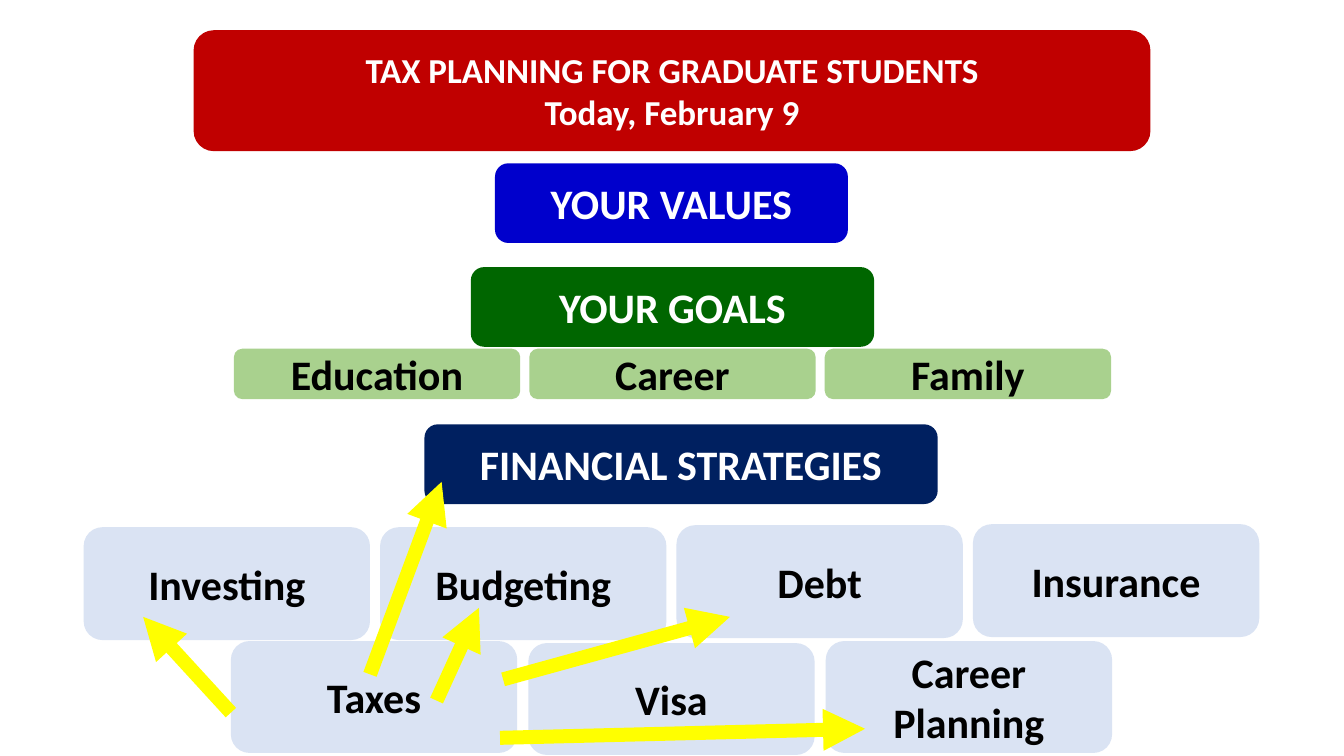
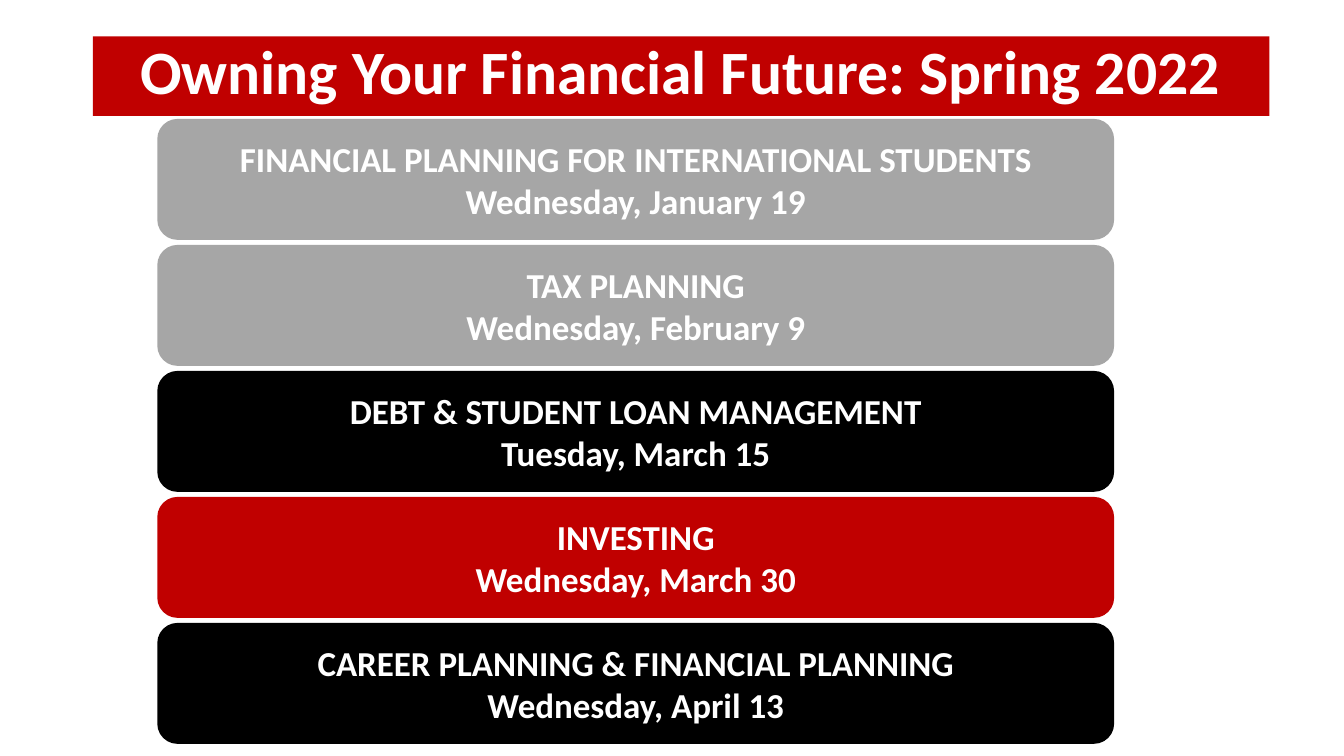
import pptx
import pptx.util
import pptx.dml.color
import pptx.enum.shapes
import pptx.enum.text
import pptx.oxml
import pptx.oxml.ns
from pptx.util import Inches

HUES = {
    "red": "C00000", "blue": "0000CC", "green": "006600", "lime": "A9D18E",
    "navy": "002060", "pale": "DAE3F3", "gray": "A6A6A6", "black": "000000",
    "white": "FFFFFF", "yellow": "FFFF00",
}


def color(name):
    return pptx.dml.color.RGBColor.from_string(HUES[name])


class Deck:
    face = "Calibri"

    def __init__(self):
        self.show = pptx.Presentation()
        self.show.slide_width = Inches(13.33)
        self.show.slide_height = Inches(7.5)
        self.slide = None

    def start(self, layout):
        found = self.show.slide_layouts.get_by_name(layout)
        self.slide = self.show.slides.add_slide(found)

    def paint(self, shape, fill):
        shape.fill.solid()
        shape.fill.fore_color.rgb = color(fill)
        shape.line.fill.background()

    def label(self, shape, lines, size, ink):
        frame = shape.text_frame
        frame.word_wrap = True
        frame.auto_size = pptx.enum.text.MSO_AUTO_SIZE.NONE
        frame.vertical_anchor = pptx.enum.text.MSO_ANCHOR.MIDDLE
        frame.text = "\n".join(lines)
        for para in frame.paragraphs:
            para.alignment = pptx.enum.text.PP_ALIGN.CENTER
            font = para.font
            font.name = self.face
            font.size = pptx.util.Pt(size)
            font.bold = True
            font.color.rgb = color(ink)

    def title(self, text, left, top, width, height):
        shape = self.slide.shapes.title
        shape.left, shape.top = Inches(left), Inches(top)
        shape.width, shape.height = Inches(width), Inches(height)
        self.paint(shape, "red")
        self.label(shape, [text], 44, "white")
        shape.text_frame.vertical_anchor = pptx.enum.text.MSO_ANCHOR.TOP
        shape.text_frame.paragraphs[0].line_spacing = 0.9

    def box(self, lines, left, top, width, height, fill, ink="white", size=30):
        shape = self.slide.shapes.add_shape(
            pptx.enum.shapes.MSO_SHAPE.ROUNDED_RECTANGLE,
            Inches(left), Inches(top), Inches(width), Inches(height))
        shape.shadow.inherit = False
        self.paint(shape, fill)
        self.label(shape, lines, size, ink)

    def banner(self, lines, left, top, fill):
        self.box(lines, left, top, 9.49, 1.2, fill, size=25)

    def row(self, names, left, step, tops, height, fill):
        for index, (name, top) in enumerate(zip(names, tops)):
            self.box([name], left + index * step, top, 2.84, height, fill, "black")

    def arrow(self, start, end):
        line = self.slide.shapes.add_connector(
            pptx.enum.shapes.MSO_CONNECTOR.STRAIGHT,
            *[Inches(value) for value in start + end])
        line.line.color.rgb = color("yellow")
        line.line.width = pptx.util.Pt(10)
        space = pptx.oxml.ns.nsdecls("a")
        props = line._element.spPr
        stroke = props.find(pptx.oxml.ns.qn("a:ln"))
        stroke.append(pptx.oxml.parse_xml(f'<a:tailEnd {space} type="triangle"/>'))
        props.append(pptx.oxml.parse_xml(f"<a:effectLst {space}/>"))


def plan(deck):
    deck.start("Blank")
    deck.banner(["TAX PLANNING FOR GRADUATE STUDENTS", "Today, February 9"],
                1.92, 0.3, "red")
    deck.box(["YOUR VALUES"], 4.91, 1.62, 3.5, 0.79, "blue")
    deck.box(["YOUR GOALS"], 4.67, 2.65, 4, 0.79, "green")
    deck.row(["Education", "Career", "Family"], 2.32, 2.93, [3.46] * 3, 0.5, "lime")
    deck.box(["FINANCIAL STRATEGIES"], 4.21, 4.21, 5.09, 0.79, "navy")
    deck.row(["Investing", "Budgeting", "Debt", "Insurance"],
             0.83, 2.94, [5.23, 5.23, 5.21, 5.2], 1.12, "pale")
    deck.row(["Taxes", "Visa", "Career Planning"],
             2.29, 2.95, [6.36, 6.38, 6.36], 1.11, "pale")
    for start, end in [
        ((4.99, 6.74), (7.24, 6.12)),
        ((4.96, 7.32), (8.58, 7.23)),
        ((3.67, 6.69), (4.38, 4.78)),
        ((4.33, 6.95), (4.75, 6.03)),
        ((2.29, 7.07), (1.42, 6.12)),
    ]:
        deck.arrow(start, end)


def series(deck):
    deck.start("Title Only")
    deck.title("Owning Your Financial Future: Spring 2022", 0.92, 0.36, 11.67, 0.79)
    talks = [
        ("FINANCIAL PLANNING FOR INTERNATIONAL STUDENTS", "Wednesday, January 19", "gray"),
        ("TAX PLANNING", "Wednesday, February 9", "gray"),
        ("DEBT & STUDENT LOAN MANAGEMENT", "Tuesday, March 15", "black"),
        ("INVESTING", "Wednesday, March 30", "red"),
        ("CAREER PLANNING & FINANCIAL PLANNING", "Wednesday, April 13", "black"),
    ]
    for index, (topic, date, fill) in enumerate(talks):
        deck.banner([topic, date], 1.56, 1.18 + index * 1.25, fill)


def main():
    deck = Deck()
    plan(deck)
    series(deck)
    deck.show.save("out.pptx")


if __name__ == "__main__":
    main()
